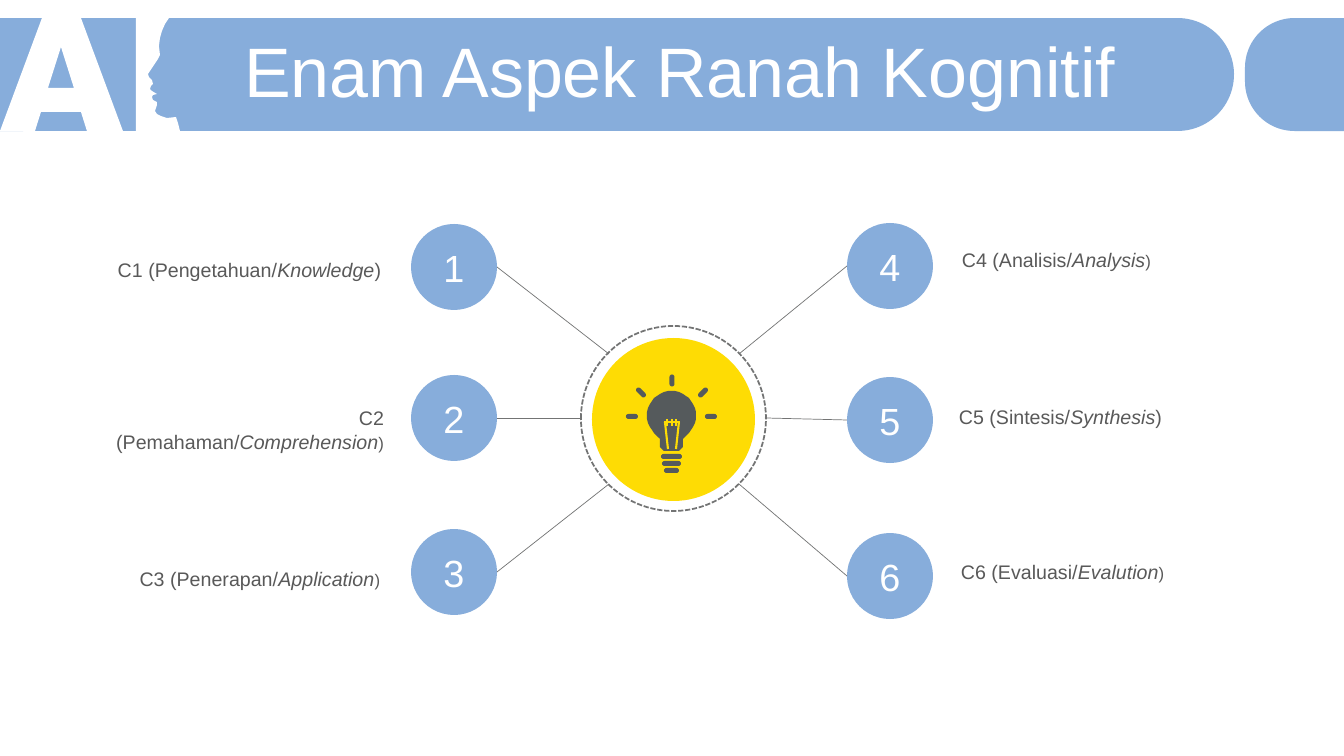
import math
from lxml import etree
from pptx import Presentation
from pptx import util as u
from pptx.dml.color import RGBColor
from pptx.enum import dml, shapes, text
from pptx.oxml.ns import qn

PX = 12192000 / 1344
COLOURS = {"blue": "87ADDB", "yellow": "FEDC04", "white": "FFFFFF",
           "label": "595959", "line": "737474", "bulb": "555A5C"}
KIND = shapes.MSO_SHAPE
ALIGN = text.PP_ALIGN


def write(tf, *runs, size, colour, align=ALIGN.LEFT, anchor=text.MSO_ANCHOR.TOP):
    tf.word_wrap = True
    tf.auto_size = text.MSO_AUTO_SIZE.NONE
    tf.vertical_anchor = anchor
    p = tf.paragraphs[0]
    p.alignment = align
    for i, words in enumerate(runs):
        r = p.add_run()
        r.text = words
        r.font.name = "Arial"
        r.font.size = u.Pt(size)
        r.font.italic = i == 1
        r.font.color.rgb = RGBColor.from_string(COLOURS[colour])
    return p


def add_shape(kind, x, y, w, h, colour, turn=0):
    sp = s.shapes.add_shape(kind, *[round(v * PX) for v in (x, y, w, h)])
    sp.shadow.inherit = False
    sp.rotation = turn
    sp.line.fill.background()
    sp.fill.solid()
    sp.fill.fore_color.rgb = RGBColor.from_string(COLOURS[colour])
    return sp


prs = Presentation()
prs.slide_width, prs.slide_height = u.Emu(12192000), u.Emu(6858000)
s = prs.slides.add_slide(prs.slide_layouts[5])

BAR_TOP, BAR_H = 18, 113
for left, length, turn in [(0, 1234, 90), (1245, 99, 270)]:
    bar = add_shape(KIND.ROUND_2_SAME_RECTANGLE, left + (length - BAR_H) / 2,
                    BAR_TOP + (BAR_H - length) / 2, BAR_H, length, "blue", turn)
    bar.adjustments[0] = 0.5

title = s.shapes.title
title.left, title.top, title.width, title.height = [round(v * PX) for v in (234, 37, 1078, 80)]
p = write(title.text_frame, "Enam Aspek Ranah Kognitif", size=50, colour="white",
          anchor=text.MSO_ANCHOR.MIDDLE)
p.line_spacing = 0.8
p.space_before = u.Pt(10)
s.shapes._spTree.append(title._element)

labels = [
    (90, 253, 301, "C1 (Pengetahuan/", "Knowledge", 14),
    (80, 401, 314, "C2 (Pemahaman/", "Comprehension", 12),
    (89, 562, 301, "C3 (Penerapan/", "Application", 12),
    (952, 243, 299, "C4 (Analisis/", "Analysis", 12),
    (949, 400, 299, "C5 (Sintesis/", "Synthesis", 14),
    (951, 555, 299, "C6 (Evaluasi/", "Evalution", 12),
]
for i, (x, y, w, term, english, close_size) in enumerate(labels):
    box = s.shapes.add_textbox(*[round(v * PX) for v in (x, y, w, 34)])
    p = write(box.text_frame, term, english, ")", size=14, colour="label",
              align=ALIGN.RIGHT if i < 3 else ALIGN.LEFT)
    p.runs[2].font.size = u.Pt(close_size)

DISC = 86
lines = []
discs = [(411, 224, 609, 354), (411, 375, 582, 418), (411, 529, 609, 484),
         (847, 223, 739, 354), (847, 377, 765, 418), (847, 533, 739, 484)]
for number, (x, y, hub_x, hub_y) in enumerate(discs, 1):
    disc = add_shape(KIND.OVAL, x, y, DISC, DISC, "blue")
    write(disc.text_frame, str(number), size=27, colour="white", align=ALIGN.CENTER,
          anchor=text.MSO_ANCHOR.MIDDLE)
    edge = x + DISC if x < hub_x else x
    lines.append((edge, y + DISC // 2, hub_x, hub_y, "line", 0.5))

add_shape(KIND.OVAL, 592, 338, 163, 163, "yellow")
ring = add_shape(KIND.OVAL, 581, 326, 185, 185, "white")
ring.fill.background()
ring.line.color.rgb = RGBColor.from_string(COLOURS["line"])
ring.line.width = u.Pt(1.25)
ring.line.dash_style = dml.MSO_LINE.SQUARE_DOT

letter_a = [(42, 18), (81, 18), (123, 131), (87, 131), (81, 112), (41, 112), (35, 131), (0, 131)]
a_hole = [(61, 47), (48, 88), (74, 88)]
profile = [(136, 18), (169, 18), (165, 24), (162, 31), (160, 38), (159, 46), (160, 55),
           (158, 59), (152, 68), (148, 74), (149, 77), (152, 80), (153, 84), (151, 86),
           (150, 89), (152, 91), (157, 94), (153, 95), (152, 97), (153, 100), (157, 102),
           (157, 105), (155, 111), (157, 114), (161, 116), (167, 118), (176, 117),
           (178, 123), (180, 131), (136, 131)]
arc = [math.radians(a) for a in range(135, 406, 9)]
bulb = [(671.5 + 24.5 * math.cos(a), 415.5 + 24.5 * math.sin(a)) for a in arc]
bulb += [(683, 439), (683, 447), (679, 451), (664, 451), (660, 447), (660, 439)]

for colour, outlines in [("white", [letter_a, a_hole, profile]), ("bulb", [bulb])]:
    fb = s.shapes.build_freeform(*outlines[0][0], scale=PX)
    for i, outline in enumerate(outlines):
        if i:
            fb.move_to(*outline[0])
        fb.add_line_segments(outline[1:], close=True)
    sp = fb.convert_to_shape()
    sp.shadow.inherit = False
    sp.line.fill.background()
    sp.fill.solid()
    sp.fill.fore_color.rgb = RGBColor.from_string(COLOURS[colour])

rays = [(632, 416, 0), (641, 392, 45), (672, 380, 90), (703, 392, 135), (711, 416, 0)]
pills = [(x - 6, y - 2, 12, turn) for x, y, turn in rays]
pills += [(661, 454, 21, 0), (662, 461, 19, 0), (664, 468, 15, 0)]
for x, y, w, turn in pills:
    pill = add_shape(KIND.ROUNDED_RECTANGLE, x, y, w, 5, "bulb", turn)
    pill.adjustments[0] = 0.5

filament = [(665, 422, 668, 449), (679, 422, 676, 449), (664, 422, 680, 422)]
filament += [(x, 419, x, 426) for x in (667, 672, 676)]
lines += [(*ends, "yellow", 1.5) for ends in filament]
for *ends, colour, width in lines:
    c = s.shapes.add_connector(shapes.MSO_CONNECTOR.STRAIGHT, *[round(v * PX) for v in ends])
    c.line.color.rgb = RGBColor.from_string(COLOURS[colour])
    c.line.width = u.Pt(width)
    etree.SubElement(c._element.spPr, qn("a:effectLst"))

prs.save("out.pptx")
